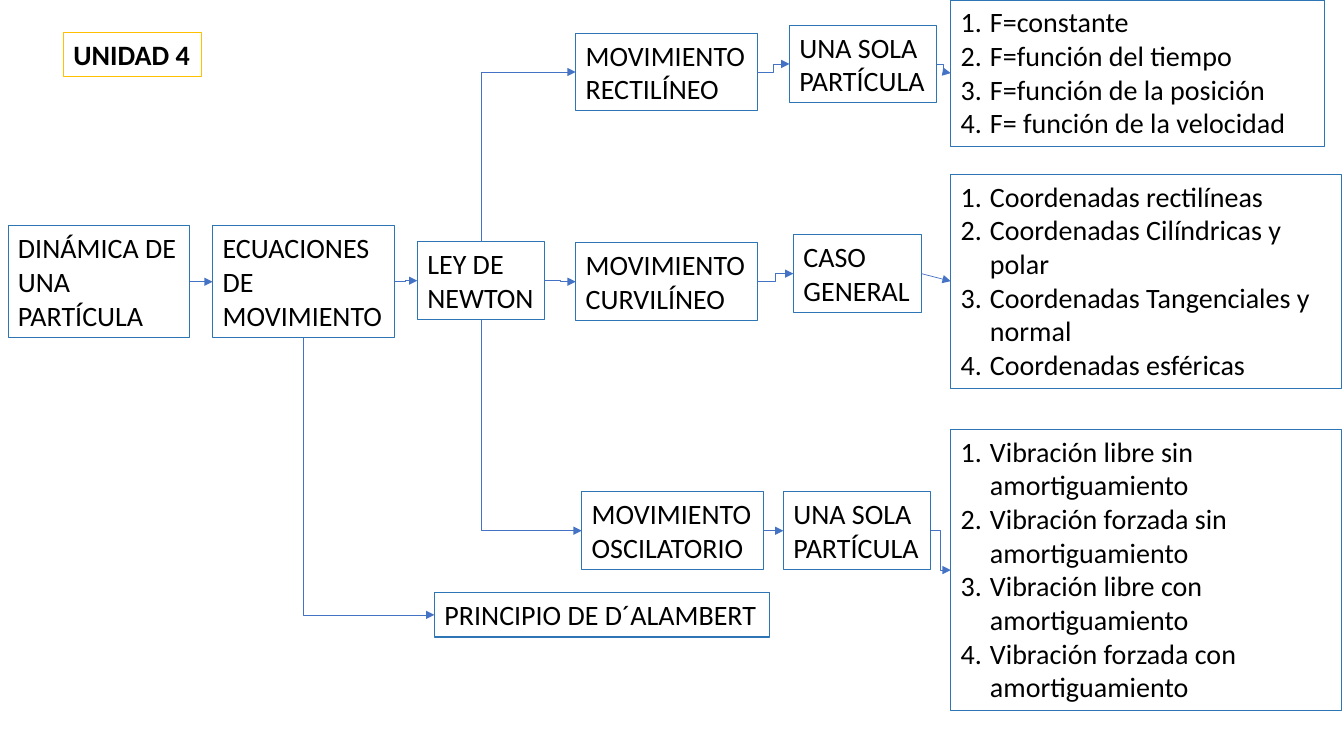
from dataclasses import dataclass

from lxml import etree
from pptx import Presentation
from pptx.dml.color import RGBColor
from pptx.enum.shapes import MSO_CONNECTOR
from pptx.enum.text import MSO_AUTO_SIZE
from pptx.oxml.ns import qn
from pptx.shapes.autoshape import Shape
from pptx.shapes.connector import Connector
from pptx.slide import Slide
from pptx.util import Inches, Pt

ELBOW, STRAIGHT = MSO_CONNECTOR.ELBOW, MSO_CONNECTOR.STRAIGHT
GROW = MSO_AUTO_SIZE.SHAPE_TO_FIT_TEXT
BOTTOM_SITE, TOP_SITE, LEFT_SITE, RIGHT_SITE = 2, 0, 1, 3
BLUE, GOLD, ARROW_BLUE, BLACK = "2E75B6", "FFC000", "4472C4", "000000"
FONT, FONT_SIZE = "Calibri", 20
NUMBER_INDENT = 0.29
ONE_LINE, TWO_LINES, THREE_LINES = 0.44, 0.77, 1.11


@dataclass
class Box:
    name: str
    left: float
    top: float
    width: float
    height: float
    lines: list[str]
    border: str = BLUE
    numbered: bool = False
    bold: bool = False
    wrap: bool = False


@dataclass
class Arrow:
    source: str
    target: str
    route: str = "across"  # across, direct, up or down


BOXES = [
    Box("dynamics", 0.08, 2.24, 1.8, THREE_LINES, ["DINÁMICA DE", "UNA", "PARTÍCULA"], wrap=True),
    Box("equations", 2.11, 2.24, 1.8, THREE_LINES, ["ECUACIONES", "DE", "MOVIMIENTO"]),
    Box("newton", 4.14, 2.4, 1.26, TWO_LINES, ["LEY DE", "NEWTON"]),
    Box("alambert", 4.31, 5.88, 3.32, ONE_LINE, ["PRINCIPIO DE D´ALAMBERT"]),
    Box("rectilinear", 5.71, 0.33, 1.8, TWO_LINES, ["MOVIMIENTO", "RECTILÍNEO"]),
    Box("curvilinear", 5.71, 2.41, 1.8, TWO_LINES, ["MOVIMIENTO", "CURVILÍNEO"]),
    Box("oscillatory", 5.77, 4.88, 1.8, TWO_LINES, ["MOVIMIENTO", "OSCILATORIO"]),
    Box("rectilinear particle", 7.83, 0.25, 1.46, TWO_LINES, ["UNA SOLA", "PARTÍCULA"]),
    Box("general case", 7.87, 2.33, 1.27, TWO_LINES, ["CASO", "GENERAL"]),
    Box("oscillatory particle", 7.77, 4.88, 1.46, TWO_LINES, ["UNA SOLA", "PARTÍCULA"]),
    Box("forces", 9.43, 0, 3.71, 1.45,
        ["F=constante", "F=función del tiempo", "F=función de la posición",
         "F= función de la velocidad"], numbered=True, wrap=True),
    Box("coordinates", 9.43, 1.73, 3.88, 2.12,
        ["Coordenadas rectilíneas", "Coordenadas Cilíndricas y polar",
         "Coordenadas Tangenciales y normal", "Coordenadas esféricas"],
        numbered=True, wrap=True),
    Box("vibrations", 9.43, 4.26, 3.88, 2.79,
        ["Vibración libre sin amortiguamiento", "Vibración forzada sin amortiguamiento",
         "Vibración libre con amortiguamiento", "Vibración forzada con amortiguamiento"],
        numbered=True, wrap=True),
    Box("unit title", 0.63, 0.32, 1.37, ONE_LINE, ["UNIDAD 4"], border=GOLD, bold=True),
]

ARROWS = [
    Arrow("dynamics", "equations"),
    Arrow("equations", "newton"),
    Arrow("newton", "rectilinear", "up"),
    Arrow("newton", "curvilinear"),
    Arrow("newton", "oscillatory", "down"),
    Arrow("equations", "alambert", "down"),
    Arrow("curvilinear", "general case"),
    Arrow("oscillatory", "oscillatory particle"),
    Arrow("rectilinear", "rectilinear particle"),
    Arrow("rectilinear particle", "forces"),
    Arrow("general case", "coordinates", "direct"),
    Arrow("oscillatory particle", "vibrations"),
]


def color(value: str) -> RGBColor:
    return RGBColor.from_string(value)


def add_box(slide: Slide, box: Box) -> Shape:
    shape = slide.shapes.add_textbox(
        Inches(box.left), Inches(box.top), Inches(box.width), Inches(box.height))
    shape.line.color.rgb = color(box.border)
    shape.line.width = Pt(0.75)
    frame = shape.text_frame
    frame.word_wrap = box.wrap
    frame.auto_size = GROW
    for index, line in enumerate(box.lines):
        para = frame.add_paragraph() if index else frame.paragraphs[0]
        span = para.add_run()
        span.text = line
        span.font.name = FONT
        span.font.size = Pt(FONT_SIZE)
        span.font.bold = box.bold
        span.font.color.rgb = color(BLACK)
        if box.numbered:
            properties = para._p.get_or_add_pPr()
            properties.set("marL", str(Inches(NUMBER_INDENT)))
            properties.set("indent", str(-Inches(NUMBER_INDENT)))
            etree.SubElement(properties, qn("a:buFont"), typeface="+mj-lt")
            etree.SubElement(properties, qn("a:buAutoNum"), type="arabicPeriod")
    return shape


def turn_single_corner(connector: Connector, upward: bool) -> None:
    """Reshape an elbow so that it leaves vertically and arrives horizontally."""
    across = connector.end_x - connector.begin_x
    rise = abs(connector.end_y - connector.begin_y)
    center_x = (connector.begin_x + connector.end_x) // 2
    center_y = (connector.begin_y + connector.end_y) // 2
    connector.left, connector.top = center_x - rise // 2, center_y - across // 2
    connector.width, connector.height = rise, across
    properties = connector.element.spPr
    properties.find(qn("a:prstGeom")).set("prst", "bentConnector2")
    transform = properties.find(qn("a:xfrm"))
    transform.set("rot", str((90 if upward else 270) * 60000))
    transform.set("flipH", "1")
    transform.set("flipV", "1" if upward else "0")


def add_arrow(slide: Slide, arrow: Arrow, shapes: dict[str, Shape]) -> None:
    kind = STRAIGHT if arrow.route == "direct" else ELBOW
    start_site = {"up": TOP_SITE, "down": BOTTOM_SITE}.get(arrow.route, RIGHT_SITE)
    connector = slide.shapes.add_connector(kind, 0, 0, 0, 0)
    connector.begin_connect(shapes[arrow.source], start_site)
    connector.end_connect(shapes[arrow.target], LEFT_SITE)
    if arrow.route in ("up", "down"):
        turn_single_corner(connector, arrow.route == "up")
    connector.line.color.rgb = color(ARROW_BLUE)
    connector.line.width = Pt(0.5)
    etree.SubElement(connector.line._get_or_add_ln(), qn("a:tailEnd"), type="triangle")
    etree.SubElement(connector.element.spPr, qn("a:effectLst"))


def main() -> None:
    deck = Presentation()
    deck.slide_width, deck.slide_height = Inches(13.33), Inches(7.5)
    slide = deck.slides.add_slide(deck.slide_layouts[6])
    shapes = {box.name: add_box(slide, box) for box in BOXES}
    for arrow in ARROWS:
        add_arrow(slide, arrow, shapes)
    deck.save("out.pptx")


if __name__ == "__main__":
    main()
